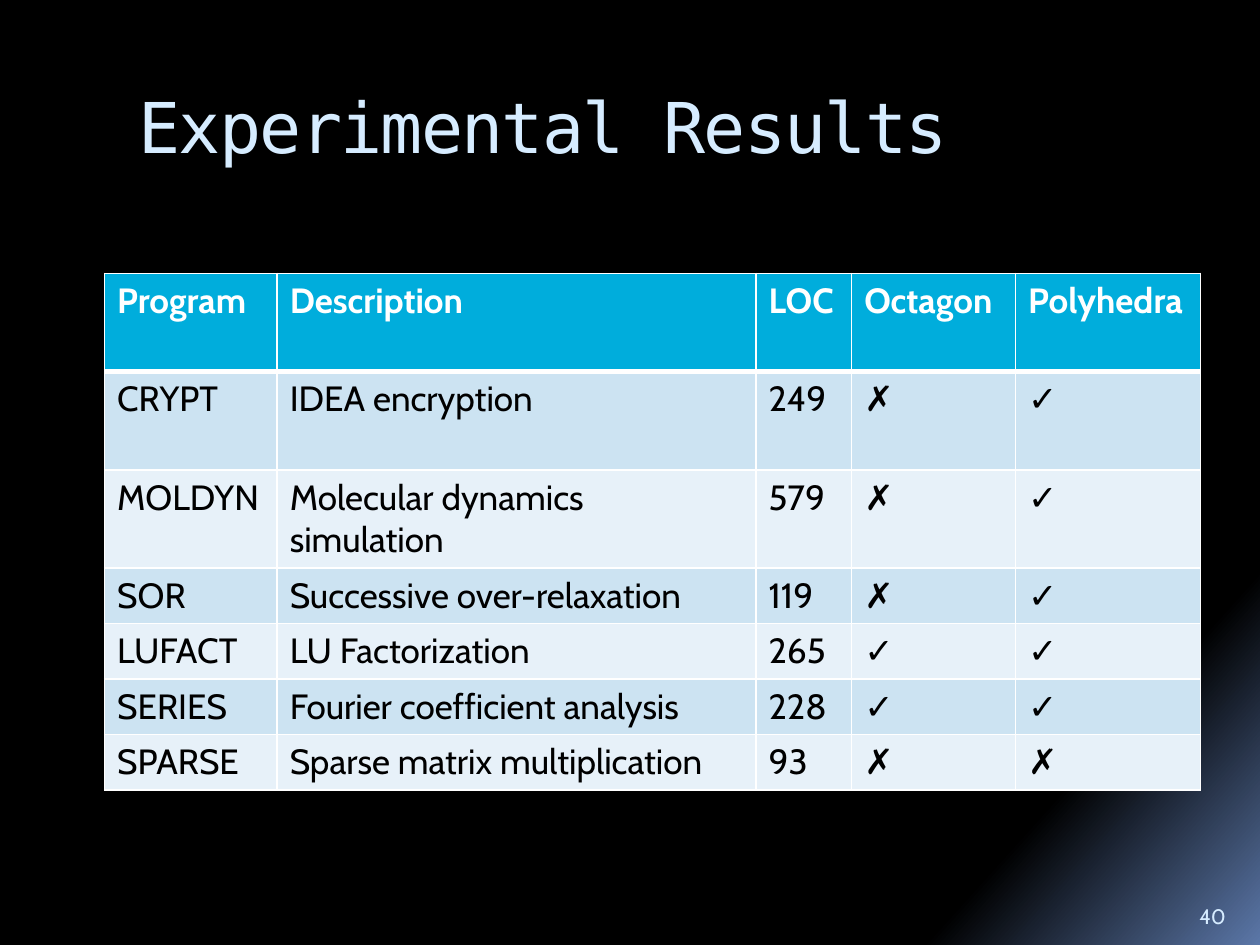
"""Build the experimental results slide with its table of benchmark programs."""
import pptx
import pptx.dml.color
import pptx.enum.text
import pptx.oxml
import pptx.oxml.ns
import pptx.util
from pptx.util import Inches

TITLE = "Experimental Results"
PAGE_NUMBER = "40"
HEADER = ("Program", "Description", "LOC", "Octagon", "Polyhedra")
PROGRAMS = [
    ("CRYPT", "IDEA encryption", "249", "✗", "✓"),
    ("MOLDYN", "Molecular dynamics simulation", "579", "✗", "✓"),
    ("SOR", "Successive over-relaxation", "119", "✗", "✓"),
    ("LUFACT", "LU Factorization", "265", "✓", "✓"),
    ("SERIES", "Fourier coefficient analysis", "228", "✓", "✓"),
    ("SPARSE", "Sparse matrix multiplication", "93", "✗", "✗"),
]
COLUMN_WIDTHS = (1.37, 3.8, 0.76, 1.3, 1.47)
ROW_HEIGHTS = (0.78,) * 3 + (0.44,) * 4
GRADIENT_STOPS = [(65, "000000"), (84, "000000"), (100, "5B77A8")]
GRADIENT_ANGLE = 42
PALE_BLUE, WHITE, BLACK = "D6ECFF", "FFFFFF", "000000"
HEADER_FILL, BAND_FILLS = "00ADDC", ("CCE3F2", "E7F1F9")
NAMESPACE = pptx.oxml.ns.nsdecls("a")


def color(value):
    return pptx.dml.color.RGBColor.from_string(value)


def write_text(frame, text, size=20, font="Cabin", fill=BLACK, bold=False, spacing=None):
    paragraph = frame.paragraphs[0]
    paragraph.alignment = pptx.enum.text.PP_ALIGN.LEFT
    run = paragraph.add_run()
    run.text = text
    run.font.size = pptx.util.Pt(size)
    run.font.name = font
    run.font.bold = bold
    run.font.color.rgb = color(fill)
    if spacing is not None:
        run.font._element.set("spc", str(spacing * 100))


def paint_background(slide):
    fill = slide.background.fill
    fill.gradient()
    gradient = slide.background._cSld.bg.bgPr.find(pptx.oxml.ns.qn("a:gradFill"))
    for child in list(gradient):
        gradient.remove(child)
    stops = "".join(
        f'<a:gs pos="{position * 1000}"><a:srgbClr val="{value}"/></a:gs>'
        for position, value in GRADIENT_STOPS
    )
    gradient.append(pptx.oxml.parse_xml(f"<a:gsLst {NAMESPACE}>{stops}</a:gsLst>"))
    gradient.append(pptx.oxml.parse_xml(
        f'<a:lin {NAMESPACE} ang="{GRADIENT_ANGLE * 60000}" scaled="0"/>'))


def set_borders(cell, top=1, bottom=1):
    properties = cell._tc.get_or_add_tcPr()
    widths = {"lnL": 1, "lnR": 1, "lnT": top, "lnB": bottom}
    for index, (side, width) in enumerate(widths.items()):
        properties.insert(index, pptx.oxml.parse_xml(
            f'<a:{side} {NAMESPACE} w="{width * 12700}"><a:solidFill>'
            f'<a:srgbClr val="{WHITE}"/></a:solidFill></a:{side}>'))


def add_results_table(slide):
    rows = [HEADER] + PROGRAMS
    table = slide.shapes.add_table(
        len(rows), len(HEADER), Inches(0.83), Inches(2.17),
        Inches(sum(COLUMN_WIDTHS)), Inches(sum(ROW_HEIGHTS))).table
    for column, width in zip(table.columns, COLUMN_WIDTHS):
        column.width = Inches(width)
    for row, height in zip(table.rows, ROW_HEIGHTS):
        row.height = Inches(height)
    for row_index, values in enumerate(rows):
        header = row_index == 0
        for column_index, text in enumerate(values):
            cell = table.cell(row_index, column_index)
            cell.fill.solid()
            cell.fill.fore_color.rgb = color(
                HEADER_FILL if header else BAND_FILLS[(row_index - 1) % 2])
            set_borders(cell, top=3 if row_index == 1 else 1, bottom=3 if header else 1)
            write_text(cell.text_frame, text, fill=WHITE if header else BLACK, bold=header)


def main():
    presentation = pptx.Presentation()
    presentation.slide_width, presentation.slide_height = Inches(10), Inches(7.5)
    slide = presentation.slides.add_slide(presentation.slide_layouts[5])
    paint_background(slide)

    title = slide.shapes.title
    title.left, title.top = Inches(1), Inches(0.56)
    title.width, title.height = Inches(8.5), Inches(1)
    title.text_frame.vertical_anchor = pptx.enum.text.MSO_ANCHOR.TOP
    title.text_frame.margin_top = Inches(0.1)
    write_text(title.text_frame, TITLE, size=40, font="DejaVu Sans Mono",
               fill=PALE_BLUE, spacing=-1)

    add_results_table(slide)

    number = slide.shapes.add_textbox(Inches(9.42), Inches(7.02), Inches(0.5), Inches(0.4))
    number.text_frame.word_wrap = True
    number.text_frame.vertical_anchor = pptx.enum.text.MSO_ANCHOR.BOTTOM
    write_text(number.text_frame, PAGE_NUMBER, size=12, fill=PALE_BLUE)

    presentation.save("out.pptx")


if __name__ == "__main__":
    main()
